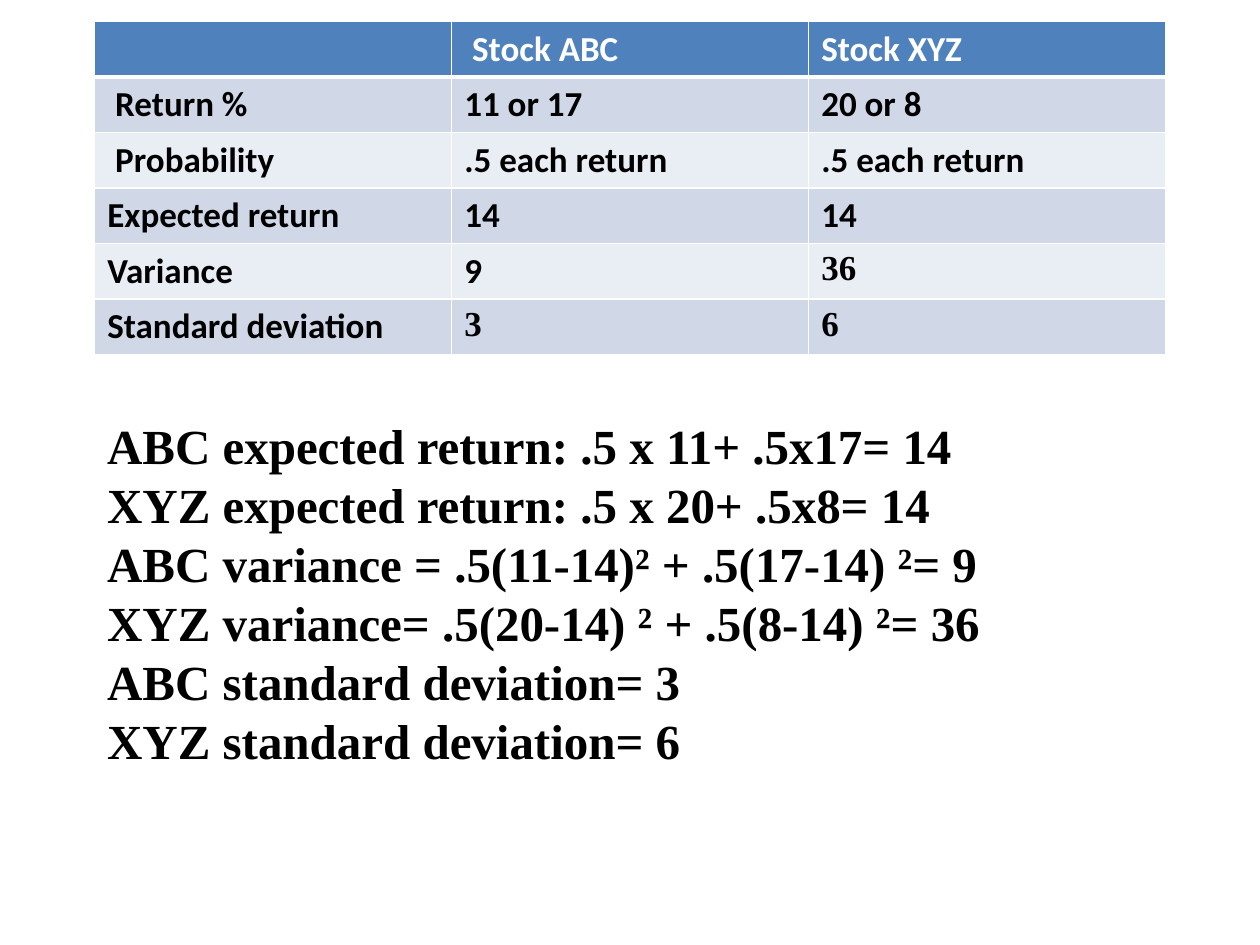
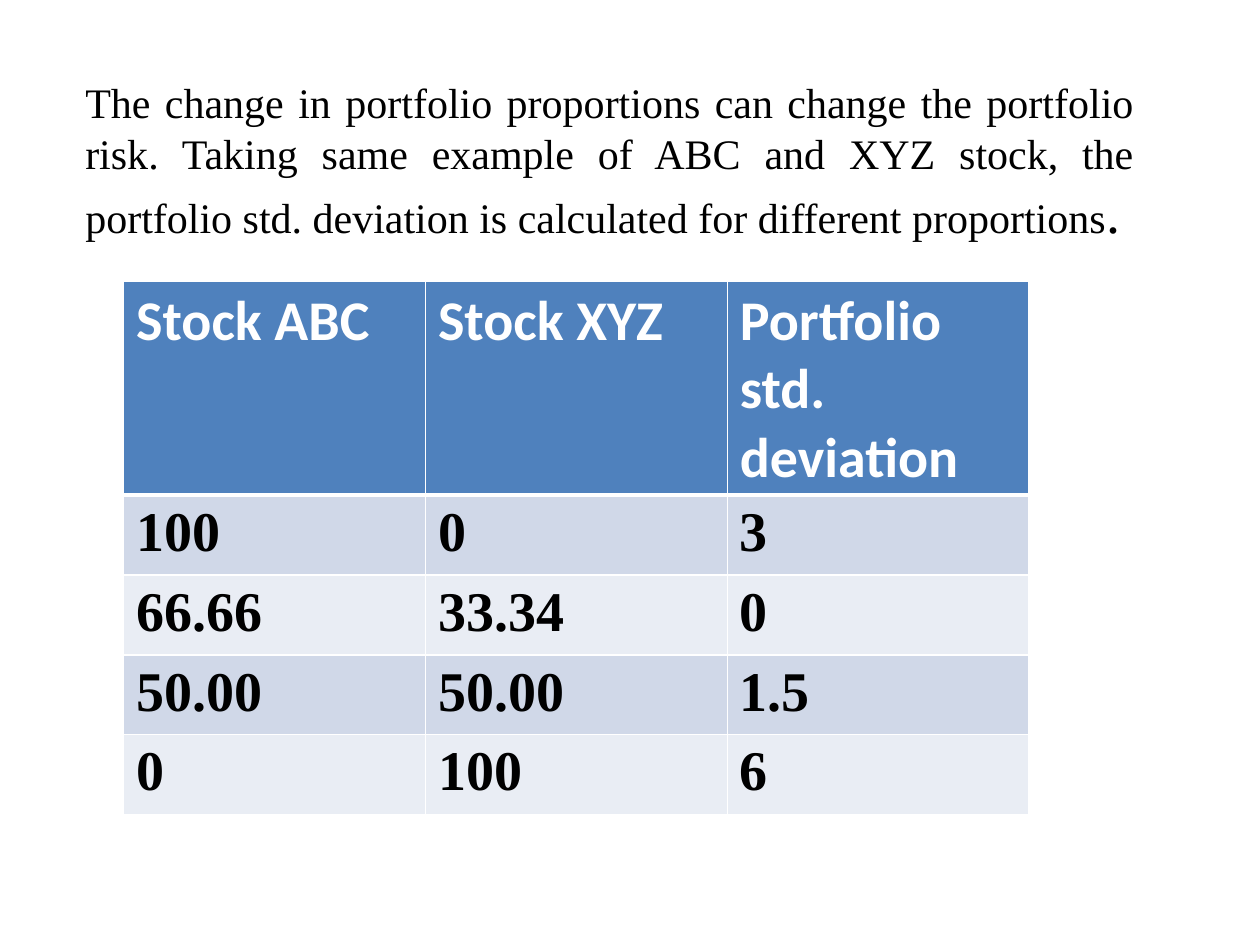
from lxml import etree
from pptx import Presentation
from pptx import util as u
from pptx.dml import color
from pptx.enum import text
from pptx.oxml import ns

HUES = {"head": "4F81BD", "odd": "D0D8E8", "even": "E9EDF4",
        "line": "FFFFFF", "ink": "000000"}
SANS = "Calibri"
SERIF = "Times New Roman"

STOCKS = [
    ["", " Stock ABC", "Stock XYZ"],
    [" Return %", "11 or 17", "20 or 8"],
    [" Probability", ".5 each return", ".5 each return"],
    ["Expected return", "14", "14"],
    ["Variance", "9", "36"],
    ["Standard deviation", "3", "6"],
]
STEPS = [
    "ABC expected return: .5 x 11+ .5x17= 14",
    "XYZ expected return: .5 x 20+ .5x8= 14",
    "ABC variance = .5(11-14)² + .5(17-14) ²= 9",
    "XYZ variance= .5(20-14) ² + .5(8-14) ²= 36",
    "ABC standard deviation= 3",
    "XYZ standard deviation= 6",
]
RISK = ("The change in portfolio proportions can change the portfolio risk. "
        "Taking same example of ABC and XYZ stock, the portfolio std. deviation "
        "is calculated for different proportions")
MIXES = [
    ["Stock ABC", "Stock XYZ", "Portfolio std. deviation"],
    ["100", "0", "3"],
    ["66.66", "33.34", "0"],
    ["50.00", "50.00", "1.5"],
    ["0", "100", "6"],
]


class Deck:
    def __init__(self):
        self.prs = Presentation()
        self.prs.slide_width = u.Cm(25.4)
        self.prs.slide_height = u.Cm(19.05)
        self.slide = None

    def page(self):
        self.slide = self.prs.slides.add_slide(self.prs.slide_layouts[6])

    def style(self, para, size, face, bold, hue="ink"):
        font = para.font
        font.size, font.name, font.bold = u.Pt(size), face, bold
        font.color.rgb = color.RGBColor.from_string(HUES[hue])

    def words(self, left, top, width, height, lines, size, bold=False):
        box = self.slide.shapes.add_textbox(
            u.Cm(left), u.Cm(top), u.Cm(width), u.Cm(height))
        frame = box.text_frame
        frame.word_wrap = True
        frame.auto_size = text.MSO_AUTO_SIZE.SHAPE_TO_FIT_TEXT
        frame.text = "\n".join(lines)
        for para in frame.paragraphs:
            self.style(para, size, SERIF, bold)
        return frame

    def edges(self, cell, base):
        props = cell._tc.get_or_add_tcPr()
        for spot, side in enumerate("LRTB"):
            width = base if side == "B" else 1
            line = etree.Element(ns.qn(f"a:ln{side}"), w=str(u.Pt(width)))
            fill = etree.SubElement(line, ns.qn("a:solidFill"))
            etree.SubElement(fill, ns.qn("a:srgbClr"), val=HUES["line"])
            props.insert(spot, line)

    def grid(self, left, top, width, highs, rows, size, is_serif):
        count = len(rows[0])
        table = self.slide.shapes.add_table(
            len(rows), count, u.Cm(left), u.Cm(top),
            u.Cm(width), u.Cm(sum(highs))).table
        for col in table.columns:
            col.width = u.Cm(width / count)
        for r, (high, row) in enumerate(zip(highs, rows)):
            table.rows[r].height = u.Cm(high)
            band = "head" if r == 0 else ("even", "odd")[r % 2]
            for c, label in enumerate(row):
                cell = table.cell(r, c)
                cell.text = label
                cell.fill.solid()
                cell.fill.fore_color.rgb = color.RGBColor.from_string(HUES[band])
                self.style(cell.text_frame.paragraphs[0], size,
                           SERIF if is_serif(r, c) else SANS, True,
                           "ink" if r else "line")
                self.edges(cell, 1 if r else 3)


def main():
    deck = Deck()

    deck.page()
    deck.grid(1.91, 0.43, 21.59, [1.11] * 6, STOCKS, 20,
              lambda r, c: (r, c) in {(4, 2), (5, 1), (5, 2)})
    deck.words(1.91, 8.26, 21.44, 7.44, STEPS, 28, True)

    deck.page()
    frame = deck.words(1.47, 1.42, 21.64, 3.68, [RISK], 24)
    para = frame.paragraphs[0]
    para.alignment = text.PP_ALIGN.JUSTIFY
    stop = para.add_run()
    stop.text = "."
    stop.font.size = u.Pt(32)
    deck.grid(2.49, 5.66, 18.26, [4.3] + [1.61] * 4, MIXES, 32,
              lambda r, c: r > 0)

    deck.prs.save("out.pptx")


if __name__ == "__main__":
    main()
